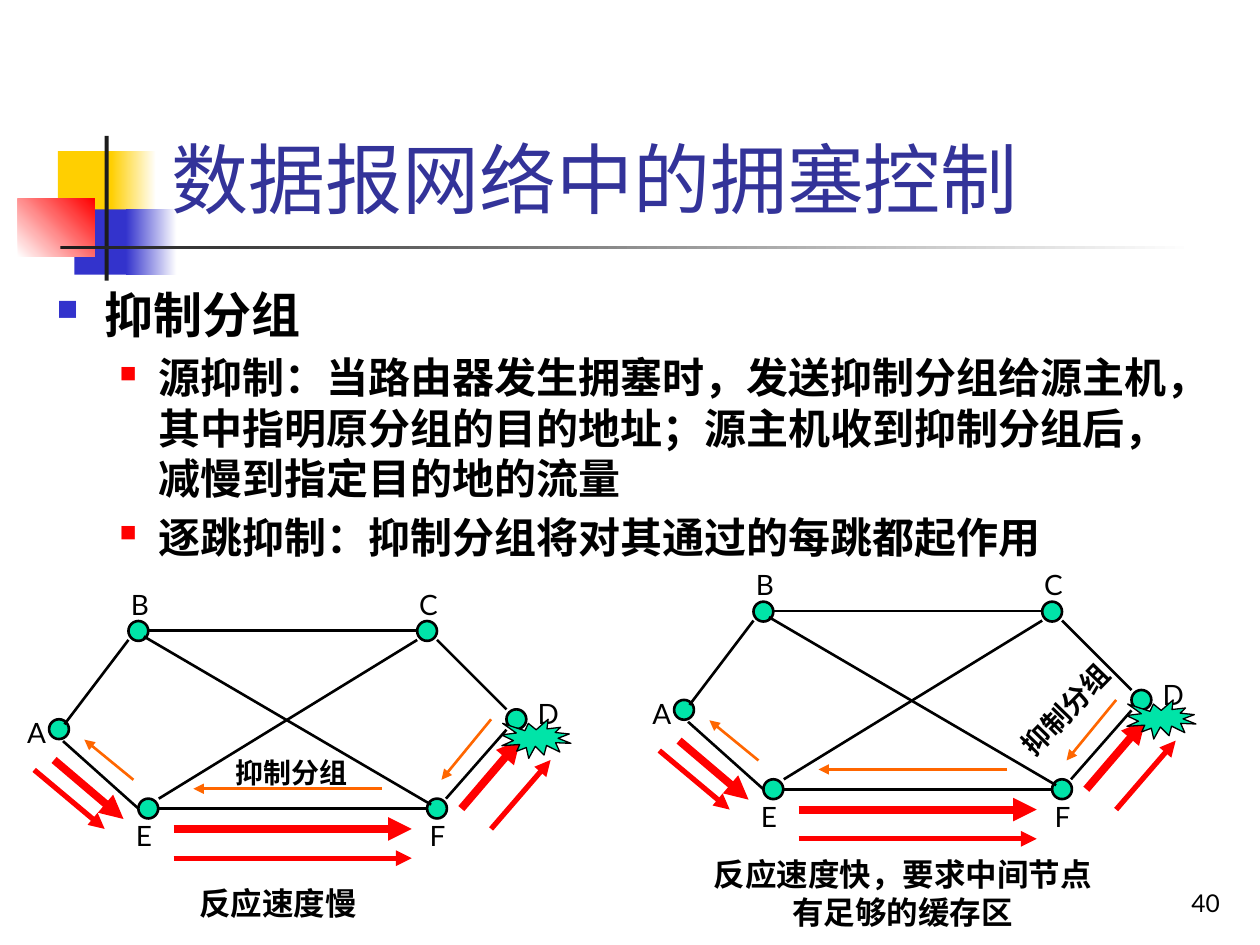
"""Build a slide on congestion control with choke packets in two networks."""
from lxml import etree
from pptx import Presentation, util as u
from pptx.dml.color import RGBColor
from pptx.enum import shapes, text
from pptx.oxml.ns import qn

THEME = {
    "font": "Lato", "ink": "000000", "title": "333399", "paper": "FFFFFF",
    "yellow": "FFCF01", "blue": "3333CC", "red": "FF0000", "dark": "1C1C1C",
    "node": "00E4A8", "choke": "FF6600",
    "title_size": 44, "head_size": 28, "point_size": 24,
    "caption_size": 18, "label_size": 16, "number_size": 14,
}

TITLE = "数据报网络中的拥塞控制"
BODY = [
    ("抑制分组", 0),
    ("源抑制：当路由器发生拥塞时，发送抑制分组给源主机，其中指明原分组的目的地址；"
     "源主机收到抑制分组后，减慢到指定目的地的流量", 1),
    ("逐跳抑制：抑制分组将对其通过的每跳都起作用", 1),
]
LEVELS = [
    {"margin": 0.97, "hang": 0.97, "bullet": "blue", "percent": 60, "size": "head_size", "before": 0},
    {"margin": 2.06, "hang": 0.79, "bullet": "red", "percent": 55, "size": "point_size", "before": 4.8},
]

# left, top, width, height, first colour, second colour, angle
DECORATION = [
    (1.17, 3.05, 1.22, 1.32, "yellow", None, 0),
    (2.24, 3.05, 0.91, 1.32, "yellow", "paper", 0),
    (1.5, 4.22, 1.17, 1.32, "blue", None, 0),
    (2.54, 4.22, 1.02, 1.32, "blue", "paper", 0),
    (0.36, 4.01, 1.55, 1.17, "paper", "red", 45),
    (2.11, 2.74, 0.08, 2.92, "dark", None, 0),
    (1.22, 4.95, 22.86, 0.08, "dark", "paper", 0),
]

NODE_SIZE = 0.4
NODES = {
    "A": ((0.99, 14.5), (0.3, 14.3)),
    "B": ((2.59, 12.52), (2.39, 11.71)),
    "E": ((2.79, 16.1), (2.49, 16.38)),
    "C": ((8.41, 12.52), (8.2, 11.71)),
    "F": ((8.61, 16.1), (8.41, 16.38)),
    "D": ((10.21, 14.3), (10.59, 13.92)),
}
LINKS = [
    (3, 12.71, 8.41, 12.71), (3.2, 16.3, 8.61, 16.3),
    (2.59, 12.9, 1.3, 14.6), (1.27, 14.94, 2.79, 16.3),
    (8.81, 12.9, 10.21, 14.3), (10.21, 14.71, 8.99, 16.1),
    (3.2, 16.1, 8.41, 12.9), (2.9, 12.83, 8.69, 16.22),
]
HEAVY_FLOW = [(1.09, 15.32, 2.49, 16.51), (3.5, 16.71, 8.3, 16.71), (9.3, 16.3, 10.49, 14.91)]
LIGHT_FLOW = [(0.69, 15.52, 2.11, 16.71), (3.5, 17.3, 8.3, 17.3), (9.9, 16.71, 11.1, 15.32)]
CHOKE_FLOW = [(9.9, 14.5, 8.9, 15.72), (2.69, 15.72, 1.7, 14.91), (7.7, 15.9, 3.9, 15.9)]
BURST = (10.11, 14.5, 1.4, 0.79)

CHOKE_LABEL = "抑制分组"
NETWORKS = [
    {"shift": (0, 0), "choke": (4.5, 15.11), "turn": 0,
     "caption": "反应速度慢", "caption_at": (1.3, 17.7, 8.61, 1.02)},
    {"shift": (12.6, -0.39), "choke": (20.04, 13.67), "turn": 314.2,
     "caption": "反应速度快，要求中间节点有足够的缓存区", "caption_at": (13.89, 17.12, 8.61, 1.78)},
]


def colour(name):
    """Return the theme colour."""
    return RGBColor.from_string(THEME[name])


def cm(values):
    """Turn plain numbers into lengths."""
    return [u.Cm(value) for value in values]


def moved(values, shift):
    """Shift alternating x and y values."""
    return [value + shift[i % 2] for i, value in enumerate(values)]


def style(para, size, ink="ink", bold=False):
    """Format every run of a paragraph."""
    for span in para.runs:
        span.font.name = THEME["font"]
        span.font.size = u.Pt(THEME[size])
        span.font.bold = bold
        span.font.color.rgb = colour(ink)


def add_text(page, at, words, size, ink="ink", bold=False, align="LEFT", anchor="TOP"):
    """Add a wrapped text box holding one paragraph."""
    box = page.shapes.add_textbox(*cm(at))
    frame = box.text_frame
    frame.word_wrap = True
    frame.vertical_anchor = text.MSO_ANCHOR[anchor]
    frame.text = words
    frame.paragraphs[0].alignment = text.PP_ALIGN[align]
    style(frame.paragraphs[0], size, ink, bold)
    return box


def add_block(page, kind, at, fill, fade=None, angle=0, line=None):
    """Add a preset shape with a solid or fading fill."""
    block = page.shapes.add_shape(shapes.MSO_SHAPE[kind], *cm(at))
    block.shadow.inherit = False
    if fade:
        block.fill.gradient()
        block.fill.gradient_angle = angle
        for stop, name in zip(block.fill.gradient_stops, (fill, fade)):
            stop.color.rgb = colour(name)
    else:
        block.fill.solid()
        block.fill.fore_color.rgb = colour(fill)
    if line:
        block.line.color.rgb = colour("ink")
        block.line.width = u.Pt(line)
    else:
        block.line.fill.background()


def add_line(page, ends, ink, width, arrow=True):
    """Add a straight line, with an arrowhead at its end if asked."""
    line = page.shapes.add_connector(shapes.MSO_CONNECTOR.STRAIGHT, *cm(ends))
    line.line.color.rgb = colour(ink)
    line.line.width = u.Pt(width)
    if arrow:
        etree.SubElement(line.line._get_or_add_ln(), qn("a:tailEnd"), type="triangle")
    etree.SubElement(line._element.spPr, qn("a:effectLst"))


def add_body(page):
    """Add the bulleted text."""
    frame = add_text(page, (0.89, 5.61, 23.6, 5.92), BODY[0][0], "head_size").text_frame
    for i, (words, depth) in enumerate(BODY):
        para = frame.paragraphs[0] if i == 0 else frame.add_paragraph()
        level = LEVELS[depth]
        para.text = words
        para.level = depth
        para.space_before = u.Pt(level["before"])
        style(para, level["size"], bold=True)
        properties = para._p.get_or_add_pPr()
        properties.set("marL", str(u.Cm(level["margin"])))
        properties.set("indent", str(-u.Cm(level["hang"])))
        tint = etree.SubElement(properties, qn("a:buClr"))
        etree.SubElement(tint, qn("a:srgbClr"), val=THEME[level["bullet"]])
        etree.SubElement(properties, qn("a:buSzPct"), val=str(level["percent"] * 1000))
        etree.SubElement(properties, qn("a:buChar"), char="■")


def add_network(page, network):
    """Draw one network with its flows and caption."""
    shift = network["shift"]
    for spot, _ in NODES.values():
        add_block(page, "OVAL", (*moved(spot, shift), NODE_SIZE, NODE_SIZE), "node", line=1.5)
    for ends in LINKS:
        add_line(page, moved(ends, shift), "ink", 1.5, arrow=False)
    for name, (_, spot) in NODES.items():
        add_text(page, (*moved(spot, shift), 1.3, 0.94), name, "label_size")
    for ends in HEAVY_FLOW:
        add_line(page, moved(ends, shift), "red", 4.5)
    add_block(page, "EXPLOSION1", (*moved(BURST[:2], shift), *BURST[2:]), "node", line=0.75)
    for flow, ink, width in ((CHOKE_FLOW, "choke", 1.5), (LIGHT_FLOW, "red", 3)):
        for ends in flow:
            add_line(page, moved(ends, shift), ink, width)
    label = add_text(page, (*network["choke"], 3.2, 0.94), CHOKE_LABEL, "label_size", bold=True)
    label.rotation = network["turn"]
    add_text(page, network["caption_at"], network["caption"], "caption_size", bold=True, align="CENTER")


def main():
    """Build and save the deck."""
    deck = Presentation()
    deck.slide_width, deck.slide_height = cm((25.4, 19.05))
    page = deck.slides.add_slide(deck.slide_layouts[6])
    for *at, fill, fade, angle in DECORATION:
        add_block(page, "RECTANGLE", at, fill, fade, angle)
    add_text(page, (19.56, 17.35, 5.28, 1.27), "40", "number_size", align="RIGHT", anchor="BOTTOM")
    add_text(page, (3.2, 0.58, 21.64, 4.06), TITLE, "title_size", "title", anchor="BOTTOM")
    add_body(page)
    for network in NETWORKS:
        add_network(page, network)
    deck.save("out.pptx")


if __name__ == "__main__":
    main()
